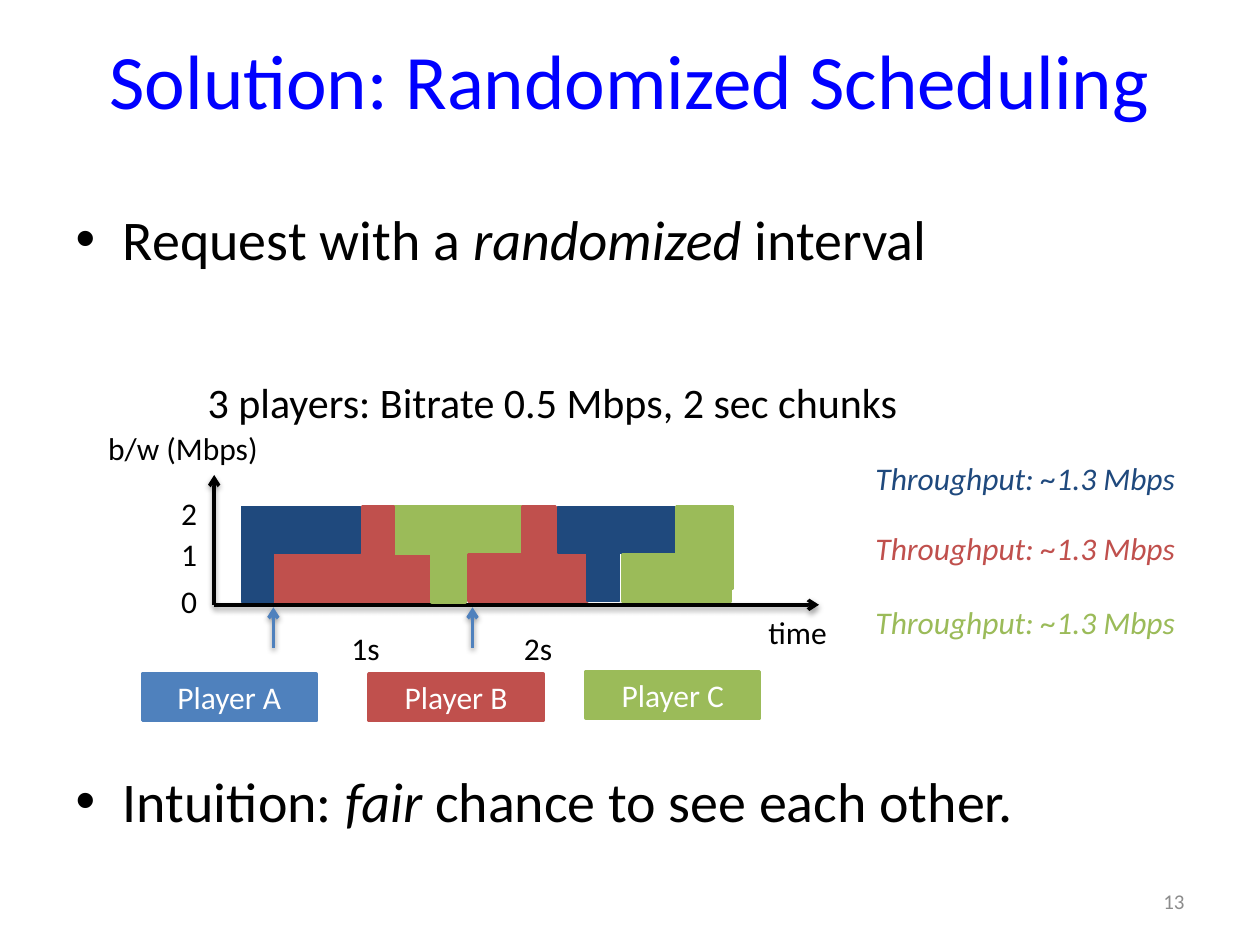
from lxml.etree import SubElement
from pptx import Presentation
from pptx.dml.color import RGBColor
from pptx.enum.shapes import MSO_CONNECTOR, MSO_SHAPE
from pptx.enum.text import MSO_ANCHOR, PP_ALIGN
from pptx.oxml.ns import qn
from pptx.util import Inches, Pt

BLACK = RGBColor(0x00, 0x00, 0x00)
WHITE = RGBColor(0xFF, 0xFF, 0xFF)
GRAY = RGBColor(0x8C, 0x8C, 0x8C)
TITLE_BLUE = RGBColor(0x00, 0x00, 0xFF)
ACCENT_BLUE = RGBColor(0x4F, 0x81, 0xBD)
NAVY = RGBColor(0x1F, 0x49, 0x7D)
RED = RGBColor(0xC0, 0x50, 0x4D)
GREEN = RGBColor(0x9B, 0xBB, 0x59)

BAR_HEIGHT = 0.37
TOP_ROW = 4.02
BOTTOM_ROW = 4.4


def add_span(para, text, size=18, color=BLACK, italic=False):
    span = para.add_run()
    span.text = text
    font = span.font
    font.name = "Calibri"
    font.size = Pt(size)
    font.color.rgb = color
    font.italic = italic
    return span


class SlideBuilder:
    def __init__(self, slide, line_width=2):
        self.slide = slide
        self.line_width = Pt(line_width)

    def place(self, shape, left, top, width, height):
        shape.left, shape.top = Inches(left), Inches(top)
        shape.width, shape.height = Inches(width), Inches(height)

    def title(self, text, *bounds):
        title = self.slide.shapes.title
        self.place(title, *bounds)
        title.text_frame.vertical_anchor = MSO_ANCHOR.MIDDLE
        add_span(title.text_frame.paragraphs[0], text, size=44, color=TITLE_BLUE)

    def bullet(self, index, before, emphasis, after, *bounds):
        body = self.slide.placeholders[index]
        self.place(body, *bounds)
        para = body.text_frame.paragraphs[0]
        add_span(para, before, size=32)
        add_span(para, emphasis, size=32, italic=True)
        add_span(para, after, size=32)

    def label(self, text, left, top, width, height=0.4, align=PP_ALIGN.LEFT,
              anchor=MSO_ANCHOR.TOP, wrap=False, **style):
        box = self.slide.shapes.add_textbox(
            Inches(left), Inches(top), Inches(width), Inches(height))
        frame = box.text_frame
        frame.word_wrap = wrap
        frame.vertical_anchor = anchor
        para = frame.paragraphs[0]
        para.alignment = align
        add_span(para, text, **style)

    def bar(self, color, left, top, width, height=BAR_HEIGHT, text=None):
        box = self.slide.shapes.add_shape(
            MSO_SHAPE.RECTANGLE, Inches(left), Inches(top), Inches(width), Inches(height))
        box.shadow.inherit = False
        box.fill.solid()
        box.fill.fore_color.rgb = color
        box.line.color.rgb = color
        box.line.width = Pt(0.75) if color == NAVY else self.line_width
        if text:
            frame = box.text_frame
            frame.vertical_anchor = MSO_ANCHOR.MIDDLE
            frame.paragraphs[0].alignment = PP_ALIGN.CENTER
            add_span(frame.paragraphs[0], text, color=WHITE)

    def arrow(self, color, start_x, start_y, end_x, end_y):
        arrow = self.slide.shapes.add_connector(
            MSO_CONNECTOR.STRAIGHT, Inches(start_x), Inches(start_y),
            Inches(end_x), Inches(end_y))
        arrow.line.color.rgb = color
        arrow.line.width = self.line_width
        SubElement(arrow.line._get_or_add_ln(), qn("a:tailEnd"), type="arrow")


def main():
    deck = Presentation()
    deck.slide_width, deck.slide_height = Inches(10), Inches(7.5)
    page = SlideBuilder(deck.slides.add_slide(deck.slide_layouts[3]))

    page.title("Solution: Randomized Scheduling", 0.5, 0, 9, 1.25)
    page.bullet(1, "Request with a ", "randomized ", "interval", 0.5, 1.57, 8.67, 2.17)
    page.bullet(2, "Intuition: ", "fair", " chance to see each other.", 0.5, 6.03, 8.67, 0.73)
    page.label("13", 7.17, 6.95, 2.33, align=PP_ALIGN.RIGHT,
               anchor=MSO_ANCHOR.MIDDLE, wrap=True, size=12, color=GRAY)

    page.arrow(BLACK, 1.7, 4.8, 6.5, 4.8)
    for color, left, top, width, height in (
        (RED, 2.17, BOTTOM_ROW, 1.24, BAR_HEIGHT),
        (NAVY, 1.92, TOP_ROW, 0.94, BAR_HEIGHT),
        (NAVY, 1.92, TOP_ROW, 0.25, 0.76),
        (GREEN, 3.12, TOP_ROW, 1.02, BAR_HEIGHT),
        (RED, 2.88, TOP_ROW, 0.24, 0.74),
        (GREEN, 3.43, 4.13, 0.26, 0.65),
        (RED, 3.72, BOTTOM_ROW, 0.94, BAR_HEIGHT),
        (NAVY, 4.43, TOP_ROW, 0.94, BAR_HEIGHT),
        (GREEN, 4.94, BOTTOM_ROW, 0.86, BAR_HEIGHT),
        (RED, 4.15, TOP_ROW, 0.26, 0.65),
        (NAVY, 4.66, 4.12, 0.26, 0.65),
        (GREEN, 5.37, TOP_ROW, 0.44, 0.65),
    ):
        page.bar(color, left, top, width, height)
    page.arrow(BLACK, 1.7, 4.8, 1.7, 3.77)

    for color, top in ((NAVY, 3.59), (RED, 4.15), (GREEN, 4.74)):
        page.label("Throughput: ~1.3 Mbps", 6.85, top, 2.67, color=color, italic=True)

    page.label("3 players: Bitrate 0.5 Mbps, 2 sec chunks", 1.55, 2.94, 5.76, 0.5, size=24)
    page.label("b/w (Mbps)", 0.76, 3.36, 1.57, wrap=True)
    page.label("time", 6, 4.82, 0.67)
    for text, left in (("1s", 2.69), ("2s", 4.06)):
        page.label(text, left, 4.94, 0.43)
    for text, top in (("2", 3.87), ("1", 4.2), ("0", 4.57)):
        page.label(text, 1.34, top, 0.37, wrap=True)

    for name, color, left, top in (
        ("Player A", ACCENT_BLUE, 1.13, 5.35),
        ("Player B", RED, 2.93, 5.35),
        ("Player C", GREEN, 4.65, 5.33),
    ):
        page.bar(color, left, top, 1.38, text=name)
    for request_x in (2.17, 3.75):
        page.arrow(ACCENT_BLUE, request_x, 5.14, request_x, 4.82)

    deck.save("out.pptx")


if __name__ == "__main__":
    main()
